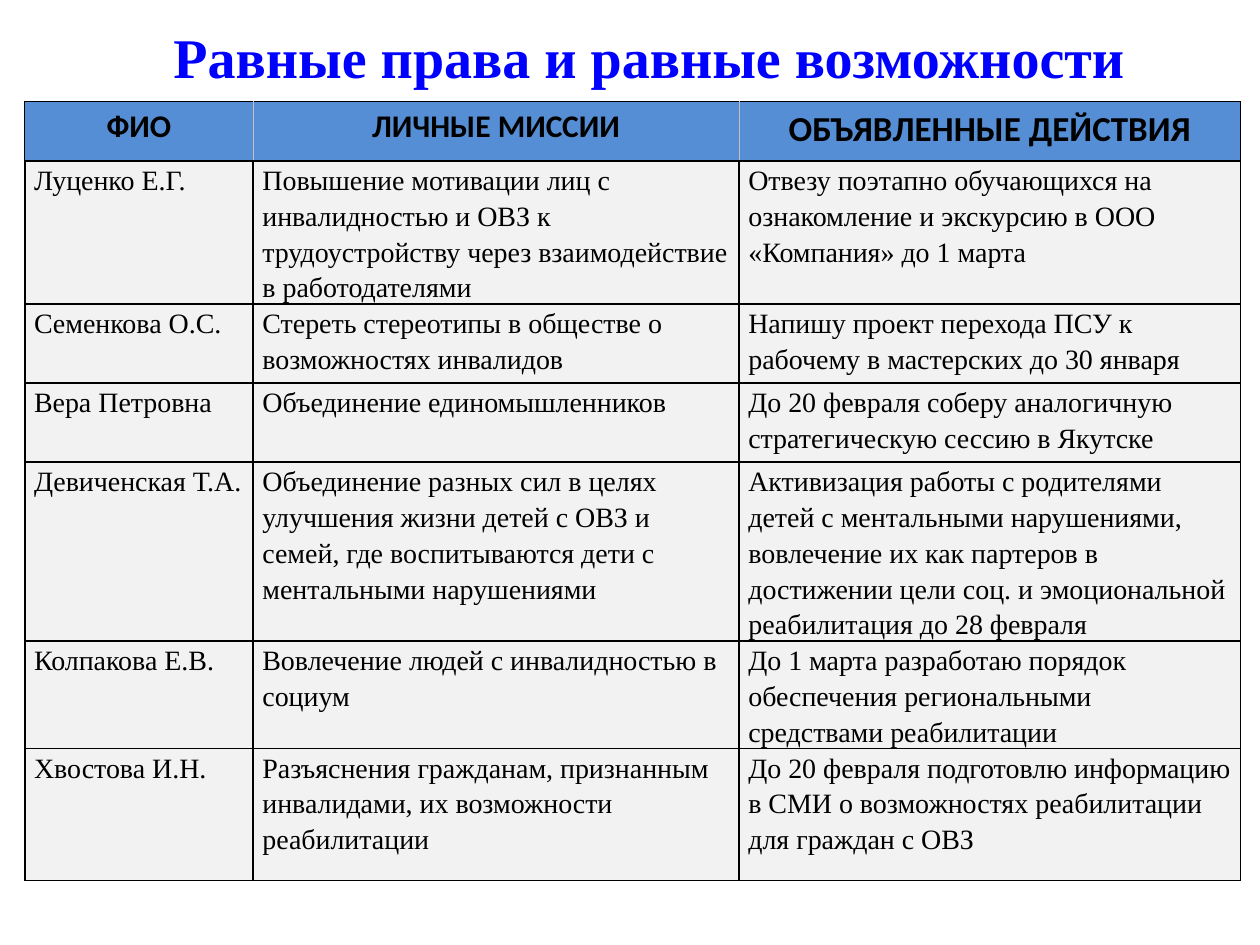
from lxml.etree import SubElement
from pptx import Presentation
from pptx.dml.color import RGBColor
from pptx.enum.text import MSO_ANCHOR, PP_ALIGN
from pptx.oxml.ns import qn
from pptx.util import Pt

HEADERS = [("ФИО", 18), ("ЛИЧНЫЕ МИССИИ", 18), ("ОБЪЯВЛЕННЫЕ ДЕЙСТВИЯ", 20)]
PEOPLE = [
    ("Луценко Е.Г.",
     "Повышение мотивации лиц с инвалидностью и ОВЗ к трудоустройству через взаимодействие в работодателями",
     "Отвезу поэтапно обучающихся на ознакомление и экскурсию в ООО «Компания» до 1 марта"),
    ("Семенкова О.С.",
     "Стереть стереотипы в обществе о возможностях инвалидов",
     "Напишу проект перехода ПСУ к рабочему в мастерских до 30 января"),
    ("Вера Петровна",
     "Объединение единомышленников",
     "До 20 февраля соберу аналогичную стратегическую сессию в Якутске"),
    ("Девиченская Т.А.",
     "Объединение разных сил в целях улучшения жизни детей с ОВЗ и семей, где воспитываются дети с ментальными нарушениями",
     "Активизация работы с родителями детей с ментальными нарушениями, вовлечение их как партеров в достижении цели соц. и эмоциональной реабилитация до 28 февраля"),
    ("Колпакова Е.В.",
     "Вовлечение людей с инвалидностью в социум",
     "До 1 марта разработаю порядок обеспечения региональными средствами реабилитации"),
    ("Хвостова И.Н.",
     "Разъяснения гражданам, признанным инвалидами, их возможности реабилитации",
     "До 20 февраля подготовлю информацию в СМИ о возможностях реабилитации для граждан с ОВЗ"),
]
COL_WIDTHS = [130.5, 277.7, 286.6]
ROW_HEIGHTS = [34, 45.2, 45.2, 45.2, 65, 47.5, 75.5]


def rgb(value):
    return RGBColor.from_string(value)


def add_run(p, text, size, font, color="000000", bold=False):
    r = p.add_run()
    r.text = text
    r.font.size = Pt(size)
    r.font.name = font
    r.font.bold = bold
    r.font.color.rgb = rgb(color)


def add_title(s, text):
    sp = s.shapes.title
    sp.left, sp.top, sp.width, sp.height = Pt(82), Pt(9.4), Pt(578), Pt(45.4)
    tf = sp.text_frame
    tf.word_wrap = True
    tf.vertical_anchor = MSO_ANCHOR.MIDDLE
    p = tf.paragraphs[0]
    p.alignment = PP_ALIGN.CENTER
    add_run(p, text, 32, "Times New Roman", "0000FF", True)


def set_borders(cell, borders):
    pr = cell._tc.get_or_add_tcPr()
    for i, (side, (color, width)) in enumerate(borders.items()):
        ln = SubElement(pr, qn(f"a:ln{side}"), w=str(Pt(width)))
        pr.remove(ln)
        pr.insert(i, ln)
        fill = SubElement(ln, qn("a:solidFill"))
        SubElement(fill, qn("a:srgbClr"), val=color)


def format_cell(cell, fill, margin, borders):
    cell.fill.solid()
    cell.fill.fore_color.rgb = rgb(fill)
    cell.margin_left = cell.margin_right = Pt(5.3)
    cell.margin_top = cell.margin_bottom = Pt(margin)
    set_borders(cell, borders)
    return cell.text_frame.paragraphs[0]


def fill_header(cell, text, size, first, last):
    outer, inner = ("000000", 0.5), ("BFBFBF", 0.5)
    borders = {"L": outer if first else inner, "R": outer if last else inner,
               "T": outer, "B": ("000000", 1)}
    p = format_cell(cell, "558ED5", 3.6, borders)
    p.alignment = PP_ALIGN.CENTER
    add_run(p, text, size, "Calibri", bold=True)


def fill_body(cell, text):
    p = format_cell(cell, "F2F2F2", 0, dict.fromkeys("LRTB", ("000000", 1)))
    p.line_spacing = 1.15
    add_run(p, text, 16, "Times New Roman")


def add_missions_table(s):
    frame = s.shapes.add_table(len(ROW_HEIGHTS), len(COL_WIDTHS), Pt(14.2), Pt(58),
                               Pt(sum(COL_WIDTHS)), Pt(sum(ROW_HEIGHTS)))
    table = frame.table
    for col, width in zip(table.columns, COL_WIDTHS):
        col.width = Pt(width)
    for row, height in zip(table.rows, ROW_HEIGHTS):
        row.height = Pt(height)
    for c, (text, size) in enumerate(HEADERS):
        fill_header(table.cell(0, c), text, size, c == 0, c == len(HEADERS) - 1)
    for r, person in enumerate(PEOPLE, 1):
        for c, text in enumerate(person):
            fill_body(table.cell(r, c), text)


def main():
    prs = Presentation()
    prs.slide_width, prs.slide_height = Pt(720), Pt(540)
    s = prs.slides.add_slide(prs.slide_layouts[5])
    add_missions_table(s)
    add_title(s, "Равные права и равные возможности")
    prs.save("out.pptx")


if __name__ == "__main__":
    main()
